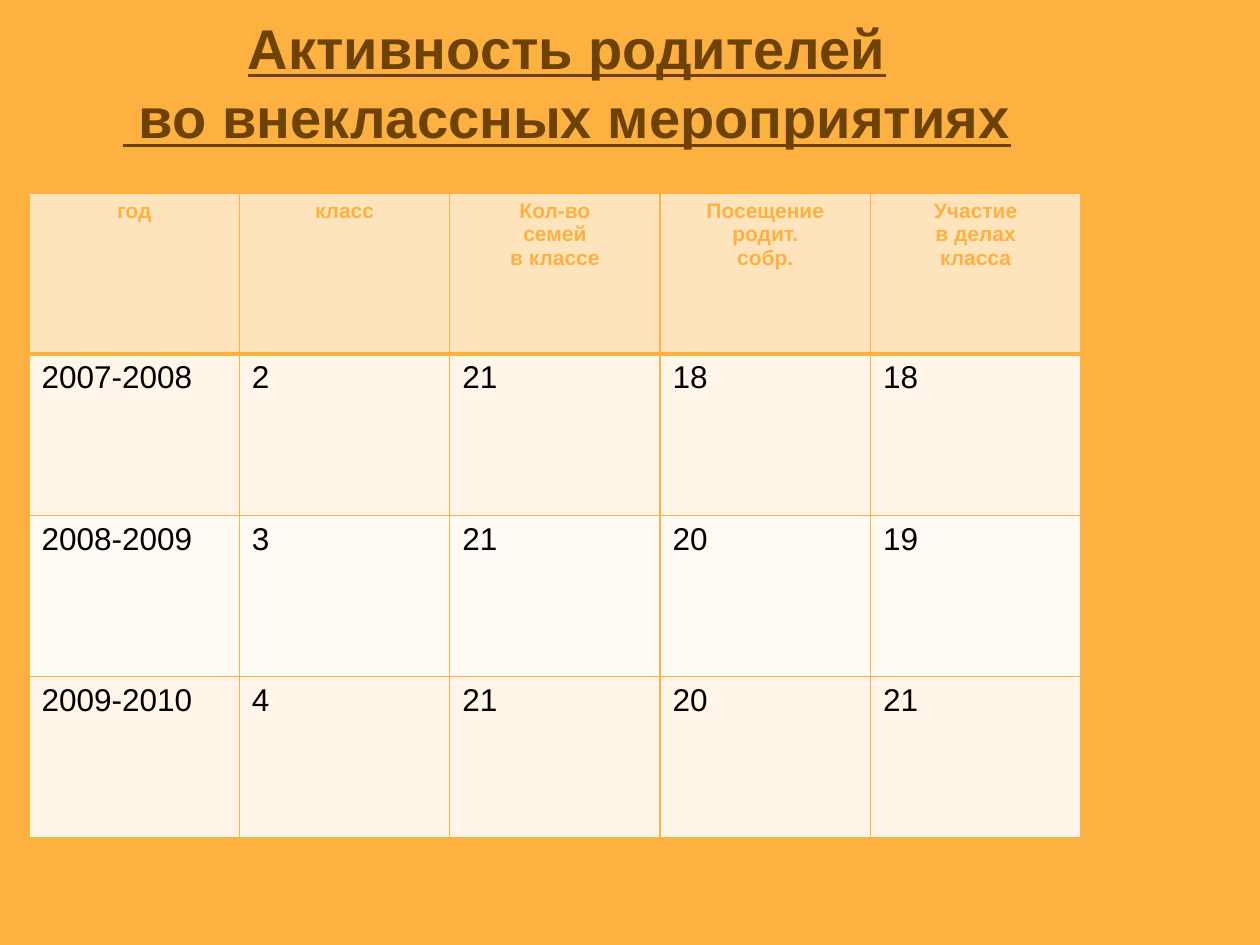
from lxml.etree import SubElement as Sub
from pptx import Presentation
from pptx.dml.color import RGBColor
from pptx.enum.text import MSO_ANCHOR as Anchor, PP_ALIGN as Align
from pptx.oxml.ns import qn
from pptx.util import Inches, Pt

AMBER = RGBColor(0xFC, 0xB1, 0x40)
BROWN = RGBColor(0x6D, 0x42, 0x02)
BLACK = RGBColor(0, 0, 0)
HEAD = RGBColor(0xFE, 0xE4, 0xBD)
BANDS = [RGBColor(0xFF, 0xFA, 0xF4), RGBColor(0xFF, 0xF5, 0xE8)]

ROWS = [
    ["год", "класс", "Кол-во\nсемей\nв классе", "Посещение\nродит.\nсобр.", "Участие\nв делах\nкласса"],
    ["2007-2008", "2", "21", "18", "18"],
    ["2008-2009", "3", "21", "20", "19"],
    ["2009-2010", "4", "21", "20", "21"],
]


def write(frame, text, size, color, bold=False, line=False, align=Align.LEFT, lead=1.0):
    frame.text = text
    for para in frame.paragraphs:
        para.alignment = align
        para.line_spacing = lead
        for run in para.runs:
            font = run.font
            font.name = "Arial"
            font.size = Pt(size)
            font.bold = bold
            font.underline = line
            font.color.rgb = color


def edge(cell, side, width):
    ln = Sub(cell._tc.get_or_add_tcPr(), qn("a:" + side), w=str(Pt(width)))
    Sub(Sub(ln, qn("a:solidFill")), qn("a:srgbClr"), val=str(AMBER))


deck = Presentation()
deck.slide_width = Inches(10)
deck.slide_height = Inches(7.5)
slide = deck.slides.add_slide(deck.slide_layouts[6])
back = slide.background.fill
back.solid()
back.fore_color.rgb = AMBER

wide, high = deck.slide_width, deck.slide_height
title = slide.shapes.add_textbox(0, int(high * 0.03), int(wide * 0.9), int(high * 0.11))
frame = title.text_frame
frame.word_wrap = True
frame.vertical_anchor = Anchor.MIDDLE
write(frame, "Активность родителей\n во внеклассных мероприятиях", size=32,
      color=BROWN, bold=True, line=True, align=Align.CENTER, lead=1.04)

col, row = Inches(1.67), Inches(1.28)
cols = len(ROWS[0])
grid = slide.shapes.add_table(len(ROWS), cols, Inches(0.23), Inches(1.53),
                              col * cols, row * len(ROWS)).table
for part in grid.columns:
    part.width = col
for part in grid.rows:
    part.height = row

for r, items in enumerate(ROWS):
    for c, text in enumerate(items):
        cell = grid.cell(r, c)
        for side in ("lnL", "lnR"):
            edge(cell, side, 1)
        edge(cell, "lnT", 3 if r == 1 else 1)
        edge(cell, "lnB", 3 if r == 0 else 1)
        cell.fill.solid()
        if r == 0:
            cell.fill.fore_color.rgb = HEAD
            write(cell.text_frame, text, size=12, color=AMBER, bold=True, align=Align.CENTER)
        else:
            cell.fill.fore_color.rgb = BANDS[r % 2]
            write(cell.text_frame, text, size=18, color=BLACK)

deck.save("out.pptx")
